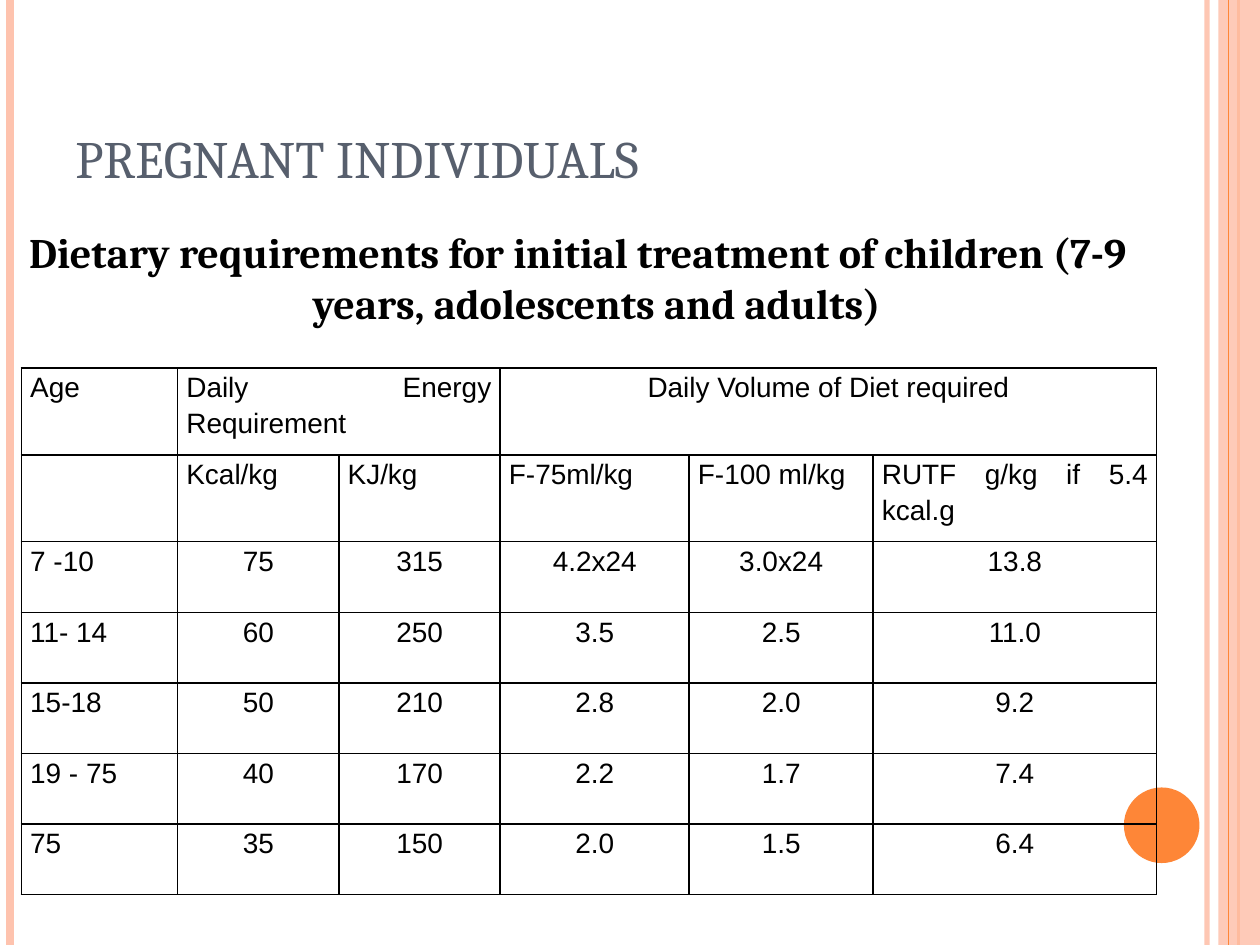
from dataclasses import dataclass

from lxml import etree
from pptx import Presentation
from pptx import util as u
from pptx.dml.color import RGBColor
from pptx.enum import shapes, text
from pptx.oxml.ns import qn


@dataclass(frozen=True)
class Theme:
    peach: str = "FEC3AE"
    orange: str = "FE8637"
    slate: str = "575F6D"
    black: str = "000000"
    heading_font: str = "Cambria"
    table_font: str = "Arial"
    title_size: float = 30
    subtitle_size: float = 24
    table_size: float = 16


def write_text(frame, content, *, font, size, color, bold=False,
               align=text.PP_ALIGN.LEFT, line_spacing=None, space_before=0):
    paragraph = frame.paragraphs[0]
    paragraph.alignment = align
    paragraph.space_before = u.Pt(space_before)
    if line_spacing:
        paragraph.line_spacing = line_spacing
    run = paragraph.add_run()
    run.text = content
    run.font.name = font
    run.font.size = u.Pt(size)
    run.font.bold = bold
    run.font.color.rgb = RGBColor.from_string(color)
    return paragraph


def set_opacity(fill_parent, percent):
    color = fill_parent.find(".//" + qn("a:srgbClr"))
    etree.SubElement(color, qn("a:alpha"), val=str(percent * 1000))


class SlideBuilder:
    def __init__(self, slide, theme):
        self.slide = slide
        self.theme = theme

    def vertical_line(self, x, color, width, opacity=100):
        line = self.slide.shapes.add_connector(
            shapes.MSO_CONNECTOR.STRAIGHT,
            u.Inches(x), u.Inches(0), u.Inches(x), u.Inches(7.5))
        line.line.color.rgb = RGBColor.from_string(color)
        line.line.width = u.Pt(width)
        properties = line._element.spPr
        if opacity < 100:
            set_opacity(properties, opacity)
        etree.SubElement(properties, qn("a:effectLst"))

    def filled_shape(self, kind, box, color, opacity=100):
        shape = self.slide.shapes.add_shape(kind, *map(u.Inches, box))
        shape.shadow.inherit = False
        shape.fill.solid()
        shape.fill.fore_color.rgb = RGBColor.from_string(color)
        shape.line.fill.background()
        if opacity < 100:
            set_opacity(shape._element.spPr, opacity)

    def text_box(self, box, content, anchor=text.MSO_ANCHOR.TOP, **style):
        frame = self.slide.shapes.add_textbox(*map(u.Inches, box)).text_frame
        frame.word_wrap = True
        frame.vertical_anchor = anchor
        return write_text(frame, content, font=self.theme.heading_font, **style)

    def table(self, left, top, widths, heights, rows, merges, centered):
        table = self.slide.shapes.add_table(
            len(rows), len(widths), u.Inches(left), u.Inches(top),
            u.Inches(sum(widths)), u.Inches(sum(heights))).table
        table.first_row = False
        table.horz_banding = False
        for column, width in zip(table.columns, widths):
            column.width = u.Inches(width)
        for row, height in zip(table.rows, heights):
            row.height = u.Inches(height)
        for row, first, last in merges:
            table.cell(row, first).merge(table.cell(row, last))
        for r, values in enumerate(rows):
            for c, value in enumerate(values):
                align = (text.PP_ALIGN.CENTER if centered(r, c)
                         else text.PP_ALIGN.JUSTIFY)
                self.table_cell(table.cell(r, c), value, align)

    def table_cell(self, cell, value, align):
        cell.margin_left = cell.margin_right = u.Inches(0.07)
        cell.margin_top = cell.margin_bottom = 0
        if value:
            write_text(cell.text_frame, value, font=self.theme.table_font,
                       size=self.theme.table_size, color=self.theme.black,
                       align=align, line_spacing=1.15)
        properties = cell._tc.get_or_add_tcPr()
        for side in ("a:lnL", "a:lnR", "a:lnT", "a:lnB"):
            border = etree.SubElement(properties, qn(side), w=str(u.Pt(1)))
            fill = etree.SubElement(border, qn("a:solidFill"))
            etree.SubElement(fill, qn("a:srgbClr"), val=self.theme.black)
        cell.fill.background()


def main():
    presentation = Presentation()
    presentation.slide_width = u.Inches(10)
    presentation.slide_height = u.Inches(7.5)
    theme = Theme()
    slide = presentation.slides.add_slide(presentation.slide_layouts[6])
    builder = SlideBuilder(slide, theme)

    builder.vertical_line(9.58, theme.peach, 3, opacity=93)
    builder.vertical_line(0.08, theme.peach, 4.5)
    builder.vertical_line(9.83, theme.orange, 1.5)
    builder.filled_shape(shapes.MSO_SHAPE.RECTANGLE, (9.67, 0, 0.33, 7.5),
                         theme.peach, opacity=87)
    builder.vertical_line(9.75, theme.orange, 0.75)
    builder.filled_shape(shapes.MSO_SHAPE.OVAL, (8.92, 6.25, 0.6, 0.6),
                         theme.orange)

    builder.text_box((0.5, 0.3, 8.17, 1.25), "PREGNANT INDIVIDUALS",
                     anchor=text.MSO_ANCHOR.BOTTOM,
                     size=theme.title_size, color=theme.slate)
    subtitle = builder.text_box(
        (0, 1.75, 9.17, 5.33),
        "Dietary requirements for initial treatment of children "
        "(7-9 years, adolescents and adults)",
        size=theme.subtitle_size, color=theme.black, bold=True,
        align=text.PP_ALIGN.CENTER, space_before=6)
    indent = u.Inches(0.3)
    paragraph_properties = subtitle._p.get_or_add_pPr()
    paragraph_properties.set("marL", str(indent))
    paragraph_properties.set("indent", str(-indent))

    rows = [
        ("Age", "Daily Energy Requirement", "",
         "Daily Volume of Diet required", "", ""),
        ("", "Kcal/kg", "KJ/kg", "F-75ml/kg", "F-100 ml/kg",
         "RUTF g/kg if 5.4 kcal.g"),
        ("7 -10", "75", "315", "4.2x24", "3.0x24", "13.8"),
        ("11- 14", "60", "250", "3.5", "2.5", "11.0"),
        ("15-18", "50", "210", "2.8", "2.0", "9.2"),
        ("19 - 75", "40", "170", "2.2", "1.7", "7.4"),
        ("75", "35", "150", "2.0", "1.5", "6.4"),
    ]
    builder.table(
        0.17, 2.92,
        widths=[1.24, 1.28, 1.28, 1.5, 1.46, 2.25],
        heights=[0.69] * 2 + [0.56] * 5,
        rows=rows,
        merges=[(0, 1, 2), (0, 3, 5)],
        centered=lambda r, c: (r > 1 and c > 0) or (r == 0 and c == 3))

    presentation.save("out.pptx")


if __name__ == "__main__":
    main()
